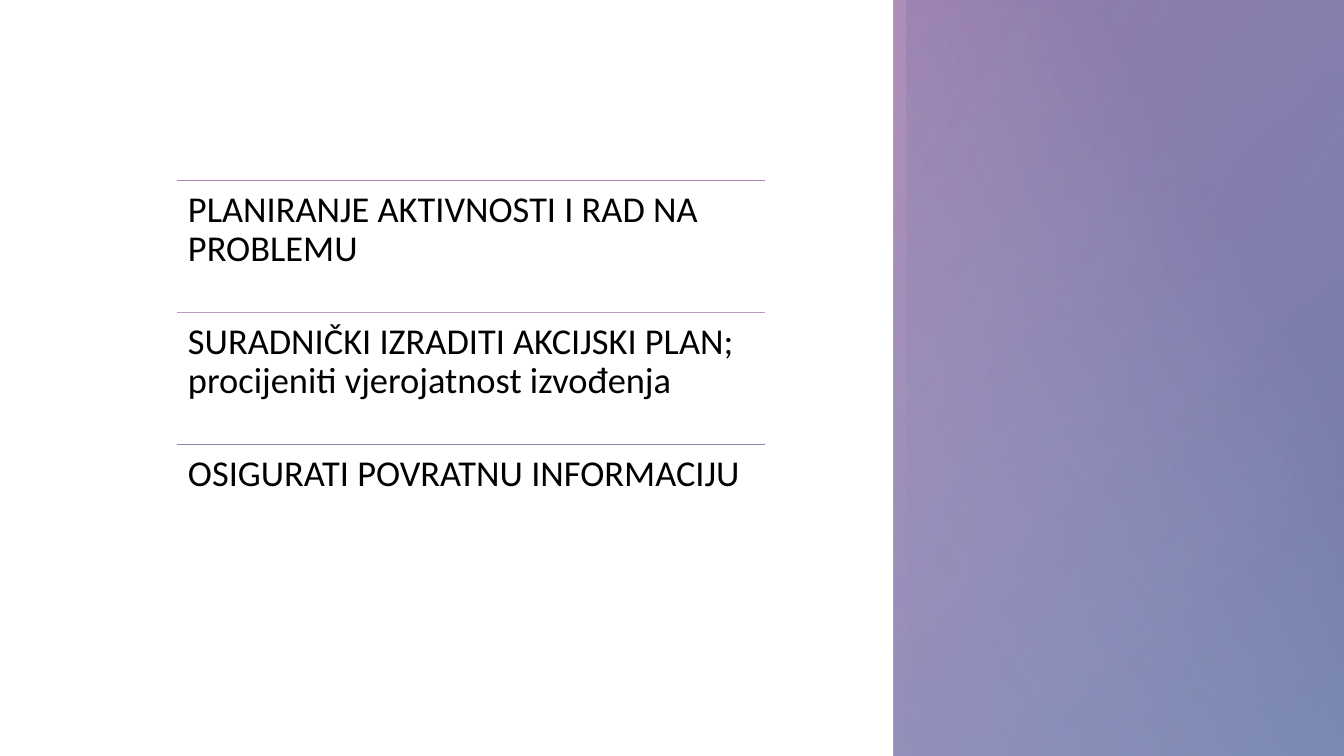
from pptx import Presentation, util as u
from pptx.dml.color import RGBColor
from pptx.enum import shapes, text
from pptx.oxml import ns, xmlchemy

STEPS = [
    ("PLANIRANJE AKTIVNOSTI I RAD NA PROBLEMU", "BA7FA9"),
    ("SURADNIČKI IZRADITI AKCIJSKI PLAN; procijeniti vjerojatnost izvođenja", "C096C6"),
    ("OSIGURATI POVRATNU INFORMACIJU", "997FBA"),
]

PANEL_LAYERS = [
    {"left": 894, "angle": 130, "stops": [(8, "7F96BA", 100), (100, "9896C6", 90)]},
    {"left": 894, "angle": 150, "stops": [(0, "997FBA", 13), (99, "BA7FA9", 52)]},
    {"left": 907, "angle": 30, "stops": [(0, "7F96BA", 0), (72, "4A4883", 26)]},
]

THEME = {"font": "Calibri", "size": 26, "ink": "000000", "paper": "FFFFFF", "rule": 0.5}

WIDTH, HEIGHT = 1344, 756
LIST_LEFT, LIST_TOP, LIST_WIDTH, STEP_HEIGHT, INSET = 177, 180, 588, 132, 11
SCALE = 64000 / 7


def px(length):
    return u.Emu(round(length * 12192000 / WIDTH))


def color(code):
    return RGBColor.from_string(code)


def add_layer(slide, left, angle, stops):
    layer = slide.shapes.add_shape(
        shapes.MSO_SHAPE.RECTANGLE, px(left), 0, px(WIDTH - left), px(HEIGHT))
    layer.shadow.inherit = False
    layer.line.fill.background()
    layer.fill.gradient()
    layer.fill.gradient_angle = angle
    for stop, (position, tint, _) in zip(layer.fill.gradient_stops, stops):
        stop.position = position / 100
        stop.color.rgb = color(tint)
    tints = layer._element.spPr.findall(".//" + ns.qn("a:srgbClr"))
    for tint, (_, _, opacity) in zip(tints, stops):
        alpha = xmlchemy.OxmlElement("a:alpha")
        alpha.set("val", str(opacity * 1000))
        tint.append(alpha)


def add_step(slide, top, wording, tint):
    rule = slide.shapes.add_connector(
        shapes.MSO_CONNECTOR.STRAIGHT,
        px(LIST_LEFT), px(top), px(LIST_LEFT + LIST_WIDTH), px(top))
    rule.line.color.rgb = color(tint)
    rule.line.width = u.Pt(THEME["rule"])
    rule._element.spPr.append(xmlchemy.OxmlElement("a:effectLst"))

    step = slide.shapes.add_textbox(px(LIST_LEFT), px(top), px(LIST_WIDTH), px(STEP_HEIGHT))
    frame = step.text_frame
    frame.word_wrap = True
    frame.vertical_anchor = text.MSO_ANCHOR.TOP
    frame.margin_left = frame.margin_right = px(INSET)
    frame.margin_top = frame.margin_bottom = px(INSET)
    paragraph = frame.paragraphs[0]
    paragraph.text = wording
    paragraph.line_spacing = 0.9
    paragraph.font.name = THEME["font"]
    paragraph.font.size = u.Pt(THEME["size"])
    paragraph.font.color.rgb = color(THEME["ink"])


def main():
    deck = Presentation()
    deck.slide_width, deck.slide_height = px(WIDTH), px(HEIGHT)
    slide = deck.slides.add_slide(deck.slide_layouts[6])
    slide.background.fill.solid()
    slide.background.fill.fore_color.rgb = color(THEME["paper"])
    for layer in PANEL_LAYERS:
        add_layer(slide, **layer)
    for row, (wording, tint) in enumerate(STEPS):
        add_step(slide, LIST_TOP + row * STEP_HEIGHT, wording, tint)
    deck.save("out.pptx")


if __name__ == "__main__":
    main()
